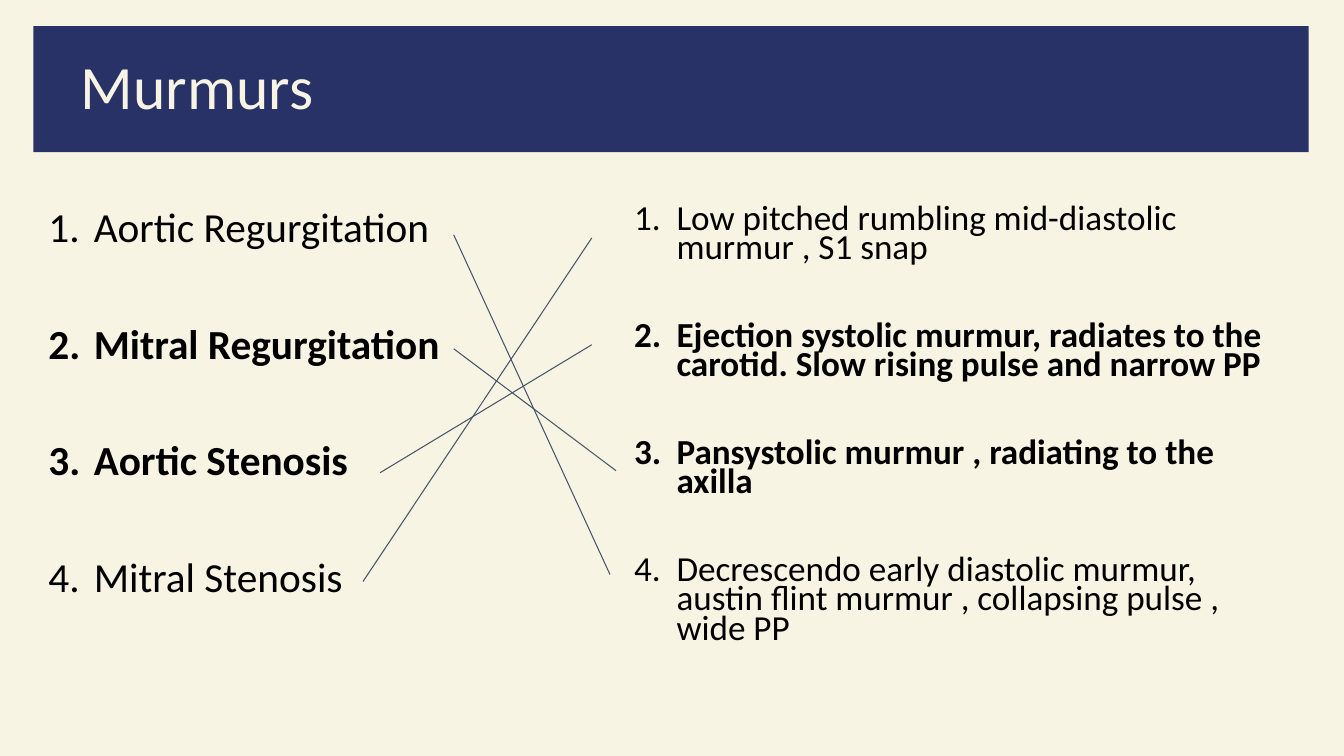
from typing import NamedTuple

from lxml import etree
from pptx import Presentation
from pptx import util as u
from pptx.dml.color import RGBColor
from pptx.enum import shapes, text
from pptx.oxml.ns import qn

CREAM, NAVY, BLACK, SLATE = "F8F4E4", "293267", "000000", "44546A"


class Item(NamedTuple):
    wording: str
    bold: bool = False


class Column(NamedTuple):
    left: float
    size: float
    line_spacing: float
    gap: float
    hanging: float
    items: list[Item]


class Match(NamedTuple):
    start: tuple[float, float]
    end: tuple[float, float]


LESIONS = Column(0.33, 29.5, 0.9, 51.5, 0.45, [
    Item("Aortic Regurgitation"),
    Item("Mitral Regurgitation", True),
    Item("Aortic Stenosis", True),
    Item("Mitral Stenosis"),
])
FINDINGS = Column(6.11, 25.1, 0.7, 41.4, 0.42, [
    Item("Low pitched rumbling mid-diastolic murmur , S1 snap"),
    Item("Ejection systolic murmur, radiates to the carotid. "
         "Slow rising pulse and narrow PP", True),
    Item("Pansystolic murmur , radiating to the axilla", True),
    Item("Decrescendo early diastolic murmur, austin flint murmur , "
         "collapsing pulse , wide PP"),
])
MATCHES = [
    Match((3.77, 4.69), (5.87, 3.42)),
    Match((4.5, 2.33), (6.05, 5.7)),
    Match((4.5, 3.46), (6.11, 4.67)),
    Match((3.6, 5.77), (5.87, 2.36)),
]


def paint(color_format, hex_color: str) -> None:
    color_format.rgb = RGBColor.from_string(hex_color)


def fill_solid(fill, hex_color: str) -> None:
    fill.solid()
    paint(fill.fore_color, hex_color)


def place(shape, left: float, top: float, width: float, height: float) -> None:
    shape.left, shape.top = u.Inches(left), u.Inches(top)
    shape.width, shape.height = u.Inches(width), u.Inches(height)


def style(paragraph, size: float, hex_color: str, bold: bool = False) -> None:
    paragraph.font.name = "Calibri"
    paragraph.font.size = u.Pt(size)
    paragraph.font.bold = bold
    paint(paragraph.font.color, hex_color)


def number(paragraph, hanging: float) -> None:
    properties = paragraph._p.get_or_add_pPr()
    properties.set("marL", str(u.Inches(0.5)))
    properties.set("indent", str(-u.Inches(hanging)))
    bullet_color = etree.SubElement(properties, qn("a:buClr"))
    etree.SubElement(bullet_color, qn("a:srgbClr"), val=BLACK)
    etree.SubElement(properties, qn("a:buFont"), typeface="+mj-lt")
    etree.SubElement(properties, qn("a:buAutoNum"), type="arabicPeriod")


def draw_band(slide) -> None:
    band = slide.shapes.add_shape(
        shapes.MSO_SHAPE.RECTANGLE,
        u.Inches(0.33), u.Inches(0.26), u.Inches(12.65), u.Inches(1.25))
    band.shadow.inherit = False
    fill_solid(band.fill, NAVY)
    band.line.fill.background()
    slide.shapes._spTree.insert(2, band._element)


def write_title(title, wording: str) -> None:
    place(title, 0.7, 0.16, 11.5, 1.45)
    frame = title.text_frame
    frame.text = wording
    frame.auto_size = text.MSO_AUTO_SIZE.NONE
    frame.vertical_anchor = text.MSO_ANCHOR.MIDDLE
    heading = frame.paragraphs[0]
    heading.alignment = text.PP_ALIGN.LEFT
    heading.line_spacing = 0.9
    style(heading, 44, CREAM)


def write_column(body, column: Column) -> None:
    place(body, column.left, 2, 6.6, 5.34)
    frame = body.text_frame
    frame.text = "\n".join(item.wording for item in column.items)
    frame.auto_size = text.MSO_AUTO_SIZE.NONE
    for position, (paragraph, item) in enumerate(zip(frame.paragraphs, column.items)):
        number(paragraph, column.hanging)
        paragraph.line_spacing = column.line_spacing
        paragraph.space_before = u.Pt(column.gap if position else 0)
        style(paragraph, column.size, BLACK, item.bold)


def draw_match(slide, match: Match) -> None:
    link = slide.shapes.add_connector(
        shapes.MSO_CONNECTOR.STRAIGHT,
        *(u.Inches(length) for length in match.start + match.end))
    paint(link.line.color, SLATE)
    link.line.width = u.Pt(0.75)
    etree.SubElement(link._element.spPr, qn("a:effectLst"))


def main() -> None:
    deck = Presentation()
    deck.slide_width, deck.slide_height = u.Inches(13.33), u.Inches(7.5)
    slide = deck.slides.add_slide(deck.slide_layouts.get_by_name("Two Content"))
    fill_solid(slide.background.fill, CREAM)
    draw_band(slide)
    write_title(slide.shapes.title, "Murmurs")
    for placeholder_index, column in enumerate((LESIONS, FINDINGS), start=1):
        write_column(slide.placeholders[placeholder_index], column)
    for match in MATCHES:
        draw_match(slide, match)
    deck.save("out.pptx")


if __name__ == "__main__":
    main()
